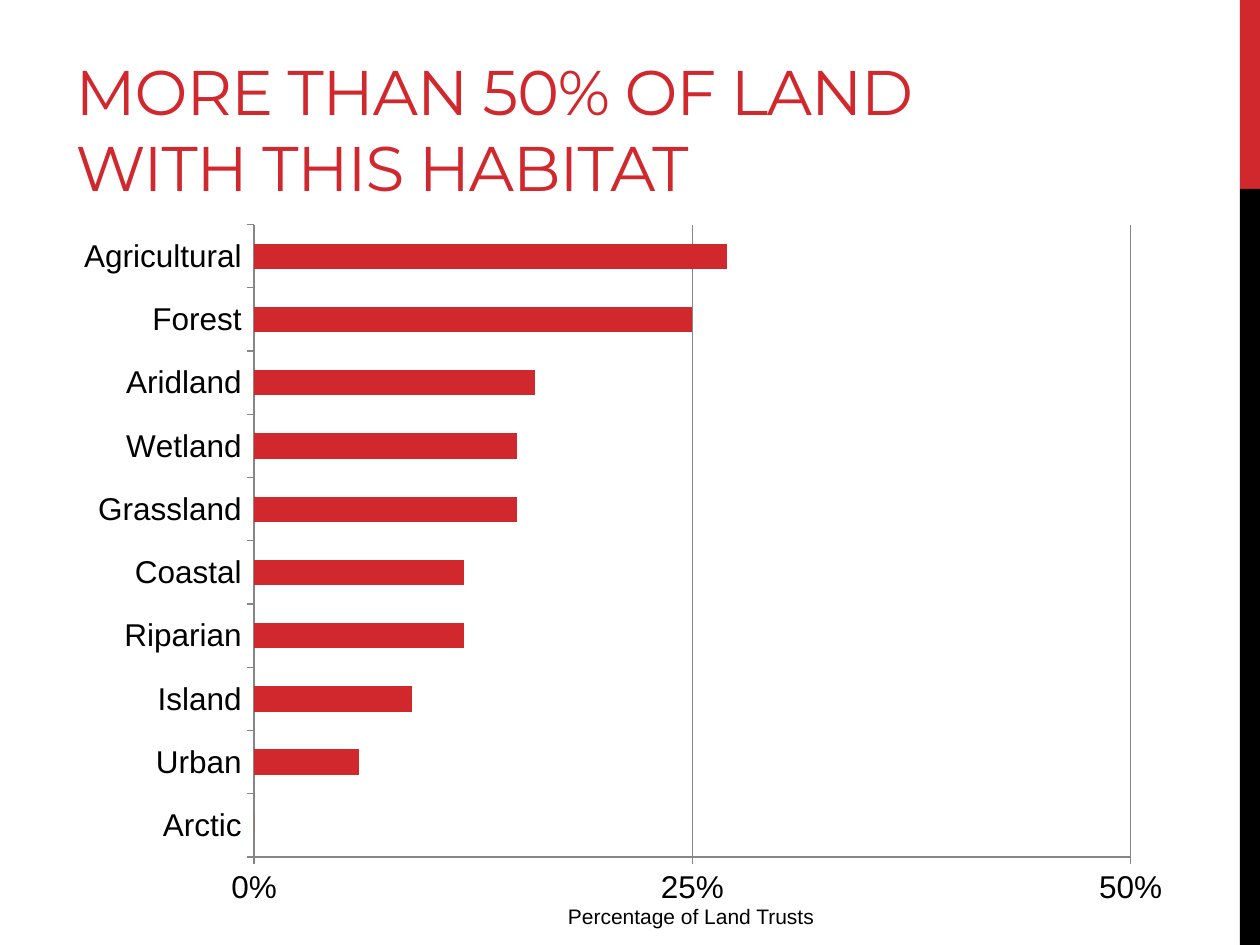
from lxml import etree
from pptx import Presentation
from pptx.chart.data import CategoryChartData
from pptx.dml.color import RGBColor
from pptx.enum.chart import XL_CHART_TYPE, XL_TICK_MARK
from pptx.enum.shapes import MSO_SHAPE
from pptx.enum.text import MSO_ANCHOR, PP_ALIGN
from pptx.oxml.ns import qn
from pptx.util import Inches, Pt

RECTANGLE = MSO_SHAPE.RECTANGLE
BAR_CLUSTERED = XL_CHART_TYPE.BAR_CLUSTERED
TICK_OUTSIDE = XL_TICK_MARK.OUTSIDE
BOTTOM = MSO_ANCHOR.BOTTOM
LEFT, CENTER = PP_ALIGN.LEFT, PP_ALIGN.CENTER

RED = RGBColor(0xD1, 0x28, 0x2E)
BLACK = RGBColor(0x00, 0x00, 0x00)
GRAY = RGBColor(0x86, 0x86, 0x86)

HABITATS = {
    "Arctic": 0, "Urban": 0.06, "Island": 0.09, "Riparian": 0.12,
    "Coastal": 0.12, "Grassland": 0.15, "Wetland": 0.15,
    "Aridland": 0.16, "Forest": 0.25, "Agricultural": 0.27,
}

deck = Presentation()
deck.slide_width, deck.slide_height = Inches(10), Inches(7.5)
page = deck.slides.add_slide(deck.slide_layouts[5])

for top, height, color in ((0, 1.5, RED), (1.5, 6, BLACK)):
    band = page.shapes.add_shape(
        RECTANGLE, Inches(9.84), Inches(top), Inches(0.16), Inches(height))
    band.shadow.inherit = False
    band.fill.solid()
    band.fill.fore_color.rgb = color
    band.line.fill.background()

title = page.shapes.title
title.left, title.top = Inches(0.5), Inches(0.17)
title.width, title.height = Inches(8.07), Inches(1.5)
title.text_frame.vertical_anchor = BOTTOM
title.text_frame.word_wrap = True
para = title.text_frame.paragraphs[0]
para.alignment = LEFT
span = para.add_run()
span.text = "MORE THAN 50% OF LAND WITH THIS HABITAT"
span.font.name = "Montserrat"
span.font.size = Pt(36)
span.font.color.rgb = RED
span.font._element.set("spc", "-60")

data = CategoryChartData(number_format="0.00%")
data.categories = list(HABITATS)
data.add_series("Series 1", list(HABITATS.values()))
chart = page.shapes.add_chart(
    BAR_CLUSTERED, Inches(0.5), Inches(1.67), Inches(8.92), Inches(5.64), data).chart
chart.has_legend = False
chart.has_title = False
chart.font.name = "Arial"
chart.font.size = Pt(18)
chart.font.color.rgb = BLACK

plot = chart.plots[0]
plot.gap_width = 150
plot.vary_by_categories = False
bars = plot.series[0].format.fill
bars.solid()
bars.fore_color.rgb = RED

value_axis = chart.value_axis
value_axis.minimum_scale = 0
value_axis.maximum_scale = 0.5
value_axis.major_unit = 0.25
value_axis.tick_labels.number_format = "0%"
value_axis.tick_labels.number_format_is_linked = False
value_axis.has_major_gridlines = True
for axis in (chart.category_axis, value_axis):
    axis.major_tick_mark = TICK_OUTSIDE
for line in (chart.category_axis.format.line, value_axis.format.line,
             value_axis.major_gridlines.format.line):
    line.color.rgb = GRAY
    line.width = Pt(0.75)

plot_area = chart._chartSpace.chart.plotArea
for old_layout in plot_area.findall(qn("c:layout")):
    plot_area.remove(old_layout)
layout = etree.Element(qn("c:layout"))
manual = etree.SubElement(layout, qn("c:manualLayout"))
for name, value in (("layoutTarget", "inner"), ("xMode", "edge"), ("yMode", "edge"),
                    ("x", "0.17"), ("y", "0.02"), ("w", "0.78"), ("h", "0.89")):
    etree.SubElement(manual, qn(f"c:{name}")).set("val", value)
plot_area.insert(0, layout)

caption = page.shapes.add_textbox(Inches(3.41), Inches(7.12), Inches(4.15), Inches(0.38))
caption.text_frame.word_wrap = True
para = caption.text_frame.paragraphs[0]
para.alignment = CENTER
span = para.add_run()
span.text = "Percentage of Land Trusts"
span.font.name = "Arial"
span.font.size = Pt(12)
span.font.color.rgb = BLACK

deck.save("out.pptx")
